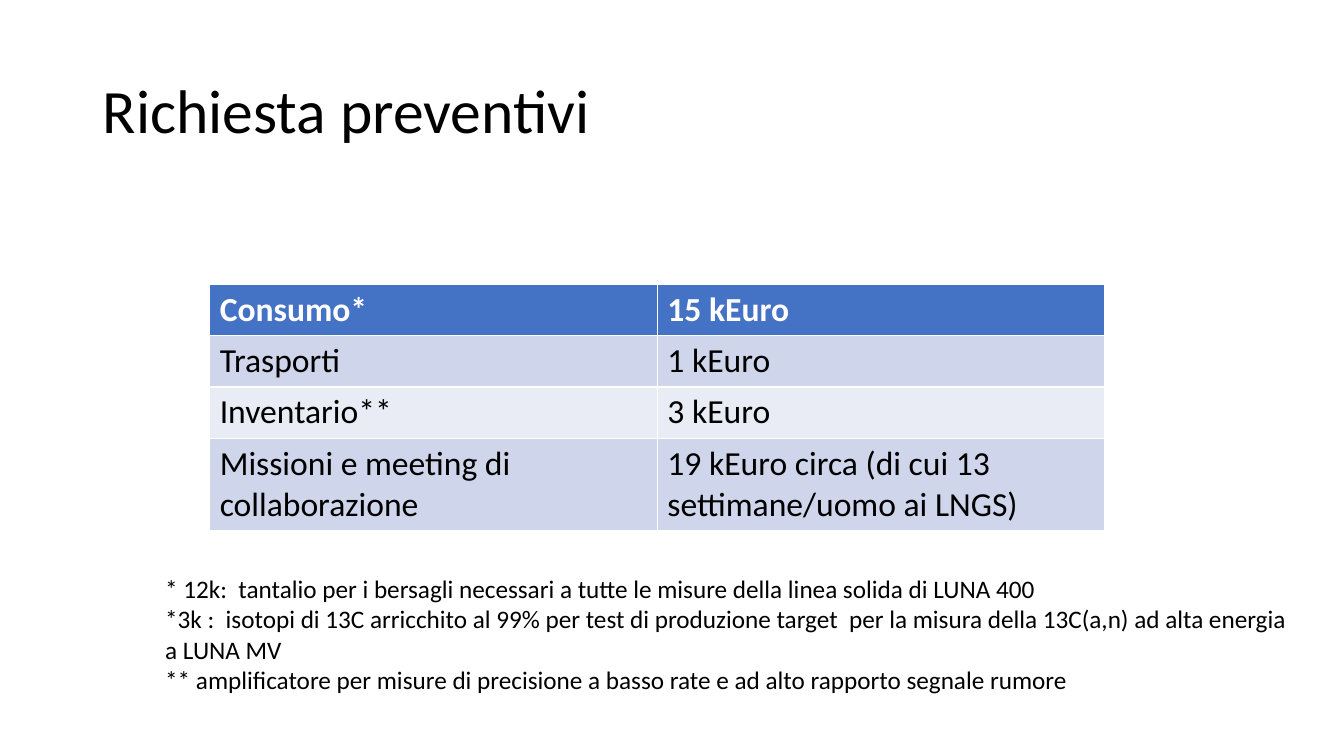
from pptx import Presentation
from pptx.dml.color import RGBColor
from pptx.enum.text import MSO_ANCHOR, MSO_AUTO_SIZE, PP_ALIGN
from pptx.util import Inches, Pt

BLACK = RGBColor(0x00, 0x00, 0x00)
WHITE = RGBColor(0xFF, 0xFF, 0xFF)
BLUE = RGBColor(0x44, 0x72, 0xC4)
BANDS = [RGBColor(0xE9, 0xEB, 0xF5), RGBColor(0xCF, 0xD5, 0xEA)]


def style(frame, size, color, bold=False):
    for para in frame.paragraphs:
        for run in para.runs:
            font = run.font
            font.name, font.size, font.bold = "Calibri", Pt(size), bold
            font.color.rgb = color


deck = Presentation()
deck.slide_width, deck.slide_height = Inches(13.33), Inches(7.5)
slide = deck.slides.add_slide(deck.slide_layouts[5])

# Title
title = slide.shapes.title
title.left, title.top = Inches(0.92), Inches(0.4)
title.width, title.height = Inches(11.5), Inches(1.45)
frame = title.text_frame
frame.text = "Richiesta preventivi"
frame.vertical_anchor = MSO_ANCHOR.MIDDLE
frame.auto_size = MSO_AUTO_SIZE.NONE
frame.paragraphs[0].alignment = PP_ALIGN.LEFT
frame.paragraphs[0].line_spacing = 0.9
style(frame, 44, BLACK)

# Cost table: the built-in style draws the white rules
costs = [
    ("Consumo*", "15 kEuro"),
    ("Trasporti", "1 kEuro"),
    ("Inventario**", "3 kEuro"),
    ("Missioni e meeting di collaborazione",
     "19 kEuro circa (di cui 13 settimane/uomo ai LNGS)"),
]
heights = [0.51, 0.51, 0.51, 0.9]
table = slide.shapes.add_table(
    len(costs), 2, Inches(2.08), Inches(2.82),
    Inches(8.88), Inches(sum(heights))).table
for r, (row, height) in enumerate(zip(costs, heights)):
    table.rows[r].height = Inches(height)
    for c, text in enumerate(row):
        cell = table.cell(r, c)
        cell.text_frame.text = text
        cell.fill.solid()
        cell.fill.fore_color.rgb = BANDS[r % 2] if r else BLUE
        style(cell.text_frame, 24, BLACK if r else WHITE, r == 0)

# Footnotes
notes = [
    "* 12k:  tantalio per i bersagli necessari a tutte le misure della linea "
    "solida di LUNA 400",
    "*3k :  isotopi di 13C arricchito al 99% per test di produzione target  "
    "per la misura della 13C(a,n) ad alta energia a LUNA MV",
    "** amplificatore per misure di precisione a basso rate e ad alto "
    "rapporto segnale rumore",
]
box = slide.shapes.add_textbox(
    Inches(1.54), Inches(5.64), Inches(11.36), Inches(1.31))
frame = box.text_frame
frame.word_wrap = True
frame.auto_size = MSO_AUTO_SIZE.SHAPE_TO_FIT_TEXT
frame.text = "\n".join(notes)
style(frame, 18, BLACK)

deck.save("out.pptx")
